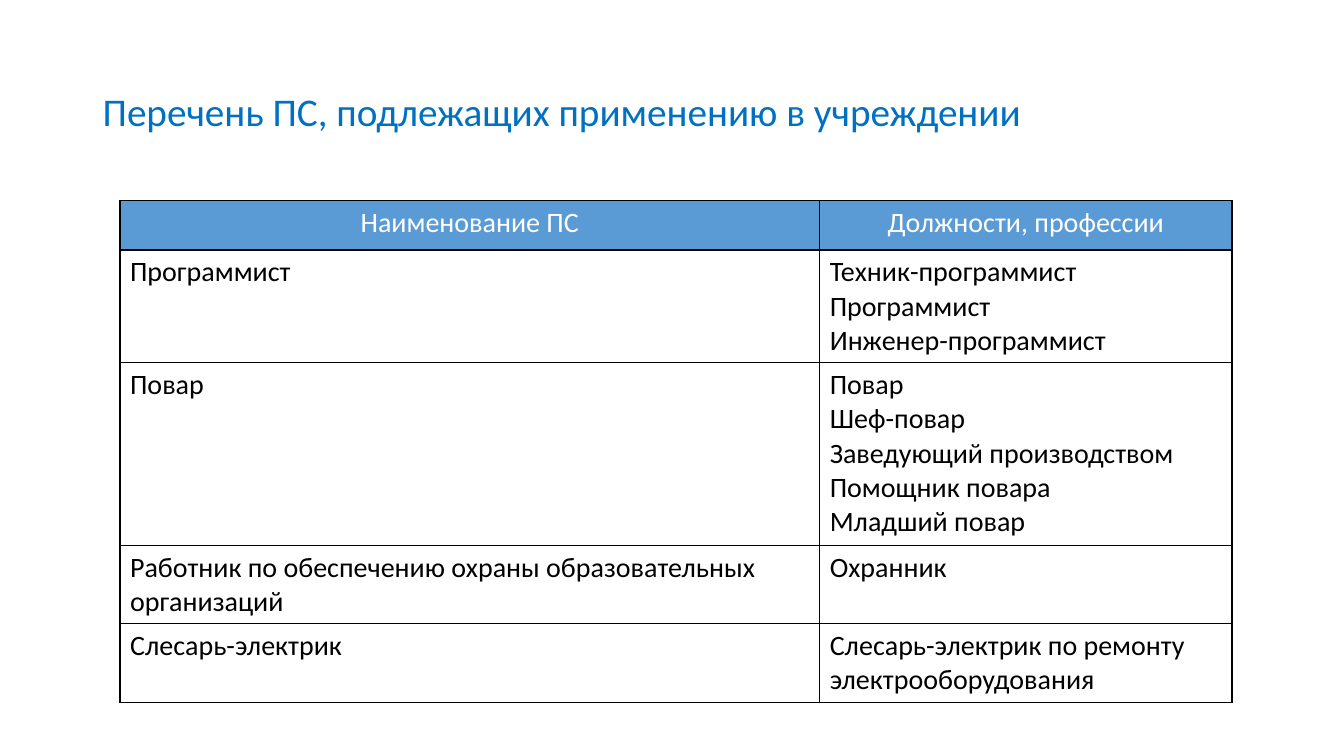
from dataclasses import dataclass

from lxml.etree import SubElement
from pptx import Presentation
from pptx.dml.color import RGBColor
from pptx.enum.text import MSO_ANCHOR, PP_ALIGN
from pptx.oxml.ns import qn
from pptx.util import Inches, Pt


@dataclass(frozen=True)
class Theme:
    font: str = "Calibri"
    title: str = "0070C0"
    head: str = "5B9BD5"
    white: str = "FFFFFF"
    ink: str = "000000"
    title_size: int = 28
    cell_size: int = 20
    border: int = 1


THEME = Theme()
TITLE = "Перечень ПС, подлежащих применению в учреждении"
HEADS = ["Наименование ПС", "Должности, профессии"]
JOBS = [
    ("Программист", ["Техник-программист", "Программист", "Инженер-программист"]),
    ("Повар", ["Повар", "Шеф-повар", "Заведующий производством",
               "Помощник повара", "Младший повар"]),
    ("Работник по обеспечению охраны образовательных организаций", ["Охранник"]),
    ("Слесарь-электрик", ["Слесарь-электрик по ремонту электрооборудования"]),
]
WIDTHS = [6.94, 4.09]
HEIGHTS = [0.49, 1.12, 1.81, 0.78, 0.78]


def add_run(para, text, size, color):
    run = para.add_run()
    run.text = text
    run.font.name = THEME.font
    run.font.size = Pt(size)
    run.font.color.rgb = RGBColor.from_string(color)


def add_title(slide, left, top, width, height):
    box = slide.shapes.add_textbox(
        Inches(left), Inches(top), Inches(width), Inches(height))
    frame = box.text_frame
    frame.word_wrap = True
    frame.vertical_anchor = MSO_ANCHOR.MIDDLE
    para = frame.paragraphs[0]
    para.line_spacing = 0.9
    add_run(para, TITLE, THEME.title_size, THEME.title)


def set_border(cell):
    props = cell._tc.get_or_add_tcPr()
    for index, side in enumerate(("lnL", "lnR", "lnT", "lnB")):
        line = props.makeelement(qn(f"a:{side}"), {"w": str(Pt(THEME.border))})
        fill = SubElement(line, qn("a:solidFill"))
        SubElement(fill, qn("a:srgbClr"), val=THEME.ink)
        props.insert(index, line)


def fill_cell(cell, lines, fill, color, align):
    cell.fill.solid()
    cell.fill.fore_color.rgb = RGBColor.from_string(fill)
    set_border(cell)
    frame = cell.text_frame
    for index, text in enumerate(lines):
        para = frame.add_paragraph() if index else frame.paragraphs[0]
        para.alignment = align
        add_run(para, text, THEME.cell_size, color)


def add_jobs(slide, left, top, width, height):
    table = slide.shapes.add_table(
        len(HEIGHTS), len(WIDTHS), Inches(left), Inches(top),
        Inches(width), Inches(height)).table
    for column, part in zip(table.columns, WIDTHS):
        column.width = Inches(width * part / sum(WIDTHS))
    for row, part in zip(table.rows, HEIGHTS):
        row.height = Inches(height * part / sum(HEIGHTS))
    for col, text in enumerate(HEADS):
        fill_cell(table.cell(0, col), [text], THEME.head, THEME.white,
                  PP_ALIGN.CENTER)
    for row, (name, posts) in enumerate(JOBS, 1):
        for col, lines in enumerate(([name], posts)):
            fill_cell(table.cell(row, col), lines, THEME.white, THEME.ink,
                      PP_ALIGN.LEFT)


def main():
    deck = Presentation()
    deck.slide_width = Inches(13.33)
    deck.slide_height = Inches(7.5)
    slide = deck.slides.add_slide(deck.slide_layouts[6])
    add_title(slide, 0.92, 0.4, 11.5, 1.45)
    add_jobs(slide, 1.19, 1.99, sum(WIDTHS), sum(HEIGHTS))
    deck.save("out.pptx")


if __name__ == "__main__":
    main()
